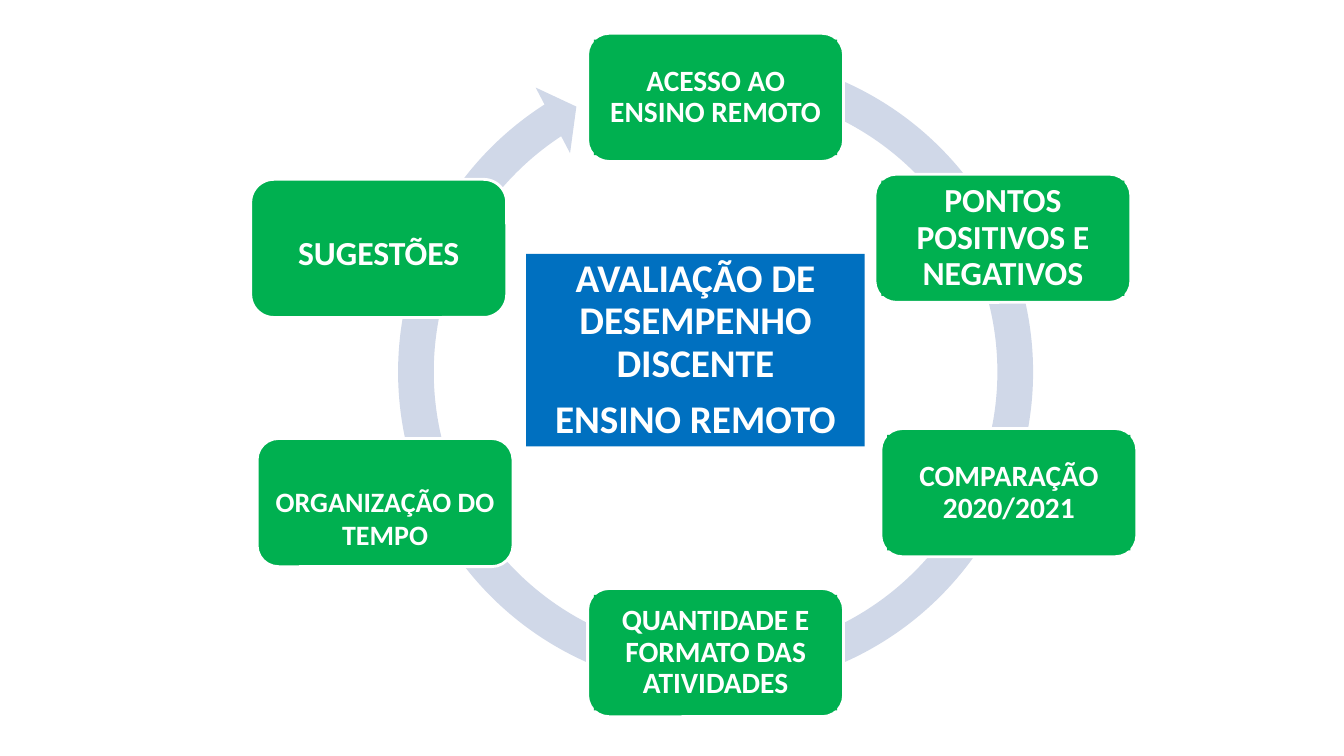
"""Build the slide on the assessment cycle of remote teaching."""
import dataclasses
import typing

import pptx
import pptx.dml.color
import pptx.enum.shapes
import pptx.enum.text
import pptx.util

Cm = pptx.util.Cm
Pt = pptx.util.Pt
Shapes = pptx.enum.shapes.MSO_SHAPE
Anchor = pptx.enum.text.MSO_ANCHOR

COLOURS = {"ring": "D0D8E8", "step": "00B050", "centre": "0070C0", "white": "FFFFFF"}
STEP_WIDTH = 6.45
LABEL_INSET = 0.16
FRAME_FORMAT = {
    "word_wrap": True,
    "auto_size": pptx.enum.text.MSO_AUTO_SIZE.NONE,
    "vertical_anchor": Anchor.MIDDLE,
    "margin_left": Cm(0.23),
    "margin_right": Cm(0.23),
    "margin_top": Cm(0.23),
    "margin_bottom": Cm(0.23),
}


@dataclasses.dataclass(frozen=True)
class Step:
    """A green step of the cycle, with lengths in centimetres."""

    text: str
    left: float
    top: float
    size: int
    height: float = 3.23
    text_top: typing.Optional[float] = None


STEPS = [
    Step("ACESSO AO ENSINO REMOTO", 14.81, 0.84, 21),
    Step("PONTOS POSITIVOS E NEGATIVOS", 22.05, 4.39, 24),
    Step("COMPARAÇÃO 2020/2021", 22.2, 10.8, 21),
    Step("QUANTIDADE E FORMATO DAS ATIVIDADES", 14.81, 14.83, 21),
    Step("ORGANIZAÇÃO DO TEMPO", 6.48, 11.05, 20, text_top=0.99),
    Step("SUGESTÕES", 6.32, 4.52, 24, height=3.48, text_top=1.16),
]


def apply_format(target: typing.Any, values: dict) -> None:
    """Set every named attribute on the target."""
    for name, value in values.items():
        setattr(target, name, value)


def colour(name: str) -> pptx.dml.color.RGBColor:
    """Look up a colour by its name."""
    return pptx.dml.color.RGBColor.from_string(COLOURS[name])


def paint(shape: typing.Any, fill: str) -> None:
    """Give a shape a solid fill and no line."""
    shape.fill.solid()
    shape.fill.fore_color.rgb = colour(fill)
    shape.line.fill.background()


def add_block(shapes: typing.Any, kind: typing.Any, fill: str,
              box: typing.Tuple[float, float, float, float]) -> typing.Any:
    """Add a flat preset shape at a box given in centimetres."""
    shape = shapes.add_shape(kind, *map(Cm, box))
    shape.shadow.inherit = False
    paint(shape, fill)
    return shape


def write(shape: typing.Any, lines: typing.List[str], size: int,
          spacing: float = 0.9, **frame_format: typing.Any) -> None:
    """Fill a shape with bold white centred paragraphs."""
    frame = shape.text_frame
    frame.text = "\n".join(lines)
    apply_format(frame, {**FRAME_FORMAT, **frame_format})
    for paragraph in frame.paragraphs:
        apply_format(paragraph, {
            "alignment": pptx.enum.text.PP_ALIGN.CENTER,
            "line_spacing": spacing,
            "space_after": Pt(0.35 * size),
        })
        for run in paragraph.runs:
            apply_format(run.font, {"name": "Calibri", "size": Pt(size), "bold": True})
            run.font.color.rgb = colour("white")


def add_ring(slide: typing.Any) -> None:
    """Draw the circular arrow behind the steps."""
    ring = add_block(slide.shapes, Shapes.CIRCULAR_ARROW, "ring", (9.55, 0.89, 16.97, 16.97))
    for index, value in enumerate((0.053, 3.126, 142.265, 171.28, 0.055)):
        ring.adjustments[index] = value


def add_step(slide: typing.Any, step: Step) -> None:
    """Draw one step as a group of a rounded card and its label."""
    group = slide.shapes.add_group_shape()
    card = add_block(group.shapes, Shapes.ROUNDED_RECTANGLE, "step",
                     (step.left, step.top, STEP_WIDTH, step.height))
    card.line.color.rgb = colour("white")
    card.line.width = Pt(2)
    if step.text_top is not None:
        write(card, [step.text], step.size, 1.0, vertical_anchor=Anchor.TOP,
              margin_top=Cm(step.text_top), margin_left=Cm(0.25), margin_right=Cm(0.25))
        return
    label = add_block(group.shapes, Shapes.RECTANGLE, "step",
                      (step.left + LABEL_INSET, step.top + LABEL_INSET,
                       STEP_WIDTH - 2 * LABEL_INSET, step.height - 2 * LABEL_INSET))
    write(label, [step.text], step.size)


def add_title(slide: typing.Any) -> None:
    """Place the title in the centre of the cycle."""
    title = slide.shapes.title
    apply_format(title, {"left": Cm(13.26), "top": Cm(6.4),
                         "width": Cm(8.53), "height": Cm(4.85)})
    paint(title, "centre")
    write(title, ["AVALIAÇÃO DE DESEMPENHO DISCENTE", "ENSINO REMOTO"], 28)


def main() -> None:
    """Build and save the presentation."""
    presentation = pptx.Presentation()
    apply_format(presentation, {"slide_width": Cm(33.87), "slide_height": Cm(19.05)})
    slide = presentation.slides.add_slide(presentation.slide_layouts.get_by_name("Title Only"))
    add_ring(slide)
    for step in STEPS:
        add_step(slide, step)
    add_title(slide)
    presentation.save("out.pptx")


if __name__ == "__main__":
    main()
